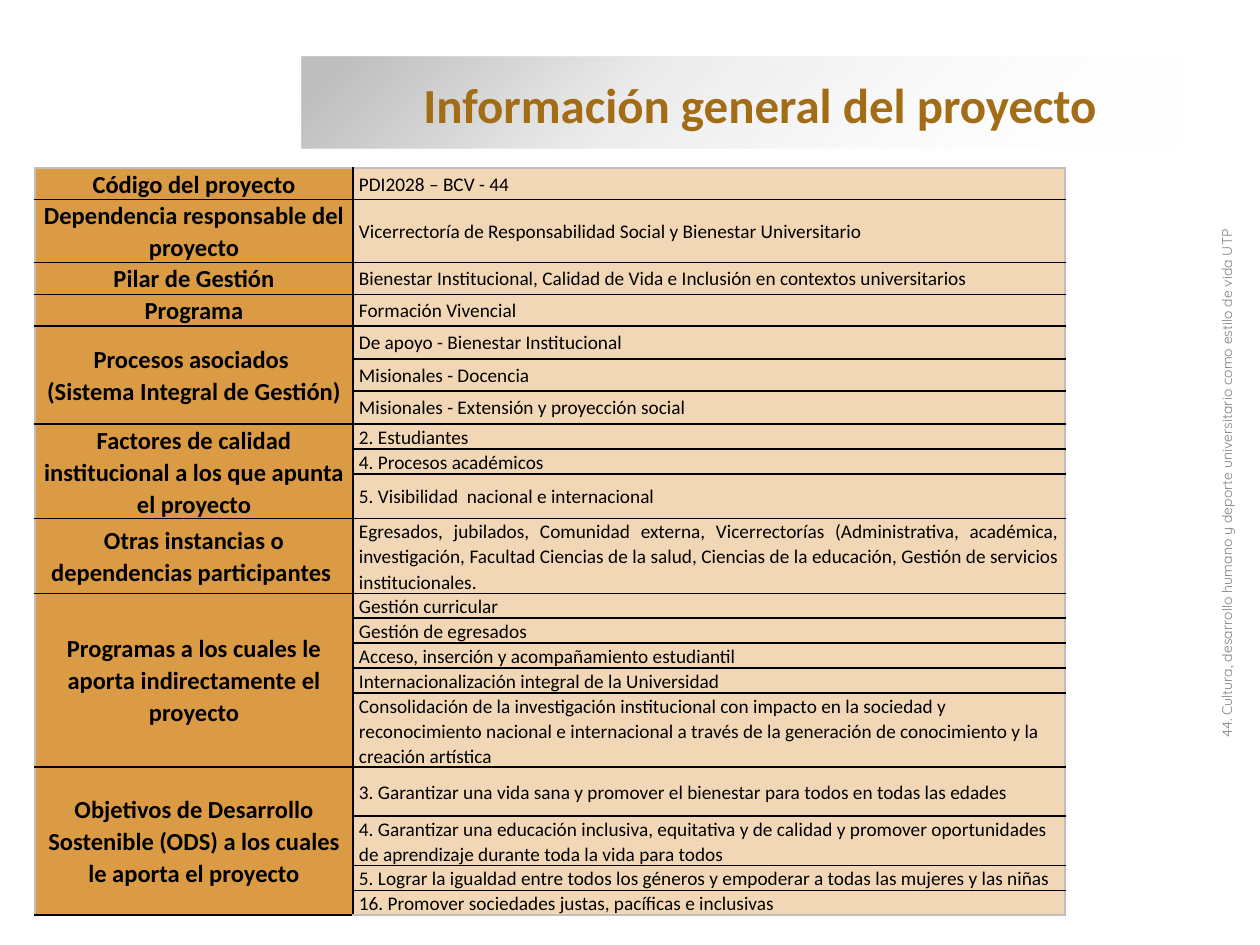
from lxml import etree
from pptx import Presentation
from pptx import util as u
from pptx.dml.color import RGBColor
from pptx.enum import shapes, text
from pptx.oxml import ns, parse_xml

EMU_PER_PX = 914400 / 126
BLACK = RGBColor(0x00, 0x00, 0x00)
WHITE = RGBColor(0xFF, 0xFF, 0xFF)
SILVER = RGBColor(0xBF, 0xBF, 0xBF)
GRAY = RGBColor(0x80, 0x80, 0x80)
BROWN = RGBColor(0xA2, 0x6D, 0x16)
OCHRE = RGBColor(0xDB, 0x9B, 0x45)
SAND = RGBColor(0xF1, 0xD7, 0xB5)

MIDDLE = text.MSO_ANCHOR.MIDDLE
LEFT, CENTER, JUSTIFY = text.PP_ALIGN.LEFT, text.PP_ALIGN.CENTER, text.PP_ALIGN.JUSTIFY
TITLE_FONT = {"name": "Calibri", "size": u.Pt(28), "bold": True}
SIDE_FONT = {"name": "Quicksand", "size": u.Pt(8)}
LABEL_FONT = {"name": "Calibri", "size": u.Pt(14), "bold": True}
VALUE_FONT = {"name": "Calibri", "size": u.Pt(11), "bold": False}

COLUMNS = [318, 712]
SECTIONS = [
    ("Código del proyecto", [(31, "PDI2028 – BCV - 44")]),
    ("Dependencia responsable del proyecto",
     [(63, "Vicerrectoría de Responsabilidad Social y Bienestar Universitario")]),
    ("Pilar de Gestión",
     [(32, "Bienestar Institucional, Calidad de Vida e Inclusión en contextos universitarios")]),
    ("Programa", [(31, "Formación Vivencial")]),
    ("Procesos asociados \n(Sistema Integral de Gestión)",
     [(33, "De apoyo - Bienestar Institucional"),
      (32, "Misionales - Docencia"),
      (33, "Misionales - Extensión y proyección social")]),
    ("Factores de calidad institucional a los que apunta el proyecto",
     [(25, "2. Estudiantes"),
      (25, "4. Procesos académicos"),
      (44, "5. Visibilidad  nacional e internacional")]),
    ("Otras instancias o dependencias participantes ",
     [(75, "Egresados, jubilados, Comunidad externa, Vicerrectorías (Administrativa, académica, "
           "investigación, Facultad Ciencias de la salud, Ciencias de la educación, "
           "Gestión de servicios institucionales.")]),
    ("Programas a los cuales le aporta indirectamente el proyecto",
     [(24, "Gestión curricular"),
      (25, "Gestión de egresados"),
      (25, "Acceso, inserción y acompañamiento estudiantil"),
      (25, "Internacionalización integral de la Universidad"),
      (74, "Consolidación de la investigación institucional con impacto en la sociedad y "
           "reconocimiento nacional e internacional a través de la generación de conocimiento "
           "y la creación artística")]),
    ("Objetivos de Desarrollo Sostenible (ODS) a los cuales le aporta el proyecto",
     [(49, "3. Garantizar una vida sana y promover el bienestar para todos en todas las edades"),
      (49, "4. Garantizar una educación inclusiva, equitativa y de calidad y promover "
           "oportunidades de aprendizaje durante toda la vida para todos"),
      (25, "5. Lograr la igualdad entre todos los géneros y empoderar a todas las mujeres y las niñas"),
      (24, "16. Promover sociedades justas, pacíficas e inclusivas")]),
]
JUSTIFIED = {"Programa", "Otras instancias o dependencias participantes "}


def px(*lengths):
    """Turn pixel lengths into a list of EMU."""
    return [u.Emu(round(n * EMU_PER_PX)) for n in lengths]


def set_all(target, values):
    """Set each attribute of target from a dict."""
    for name, value in values.items():
        setattr(target, name, value)


def write(p, content, font, color, **layout):
    """Fill a paragraph with formatted text."""
    p.text = content
    set_all(p, layout)
    for r in p.runs:
        set_all(r.font, font)
        r.font.color.rgb = color


def add_label(container, box, content, font, color, rotation=0, anchor=text.MSO_ANCHOR.TOP):
    """Add a wrapped text box."""
    sp = container.add_textbox(*px(*box))
    sp.rotation = rotation
    set_all(sp.text_frame, {"word_wrap": True, "vertical_anchor": anchor})
    write(sp.text_frame.paragraphs[0], content, font, color)


def add_gradient_band(container, box, stops, angle):
    """Add a borderless rectangle with a gradient of (position, colour, opacity) stops."""
    sp = container.add_shape(shapes.MSO_SHAPE.RECTANGLE, *px(*box))
    sp.shadow.inherit = False
    sp.line.fill.background()
    sp.fill.background()
    marks = "".join(
        f'<a:gs pos="{pos * 1000}"><a:srgbClr val="{color}">'
        f'<a:alpha val="{opacity * 1000}"/></a:srgbClr></a:gs>'
        for pos, color, opacity in stops)
    gradient = parse_xml(
        f'<a:gradFill {ns.nsdecls("a")} rotWithShape="1"><a:gsLst>{marks}</a:gsLst>'
        f'<a:lin ang="{angle * 60000}" scaled="0"/></a:gradFill>')
    props = sp._element.spPr
    props.replace(props.find(ns.qn("a:noFill")), gradient)


def set_borders(cell, colors):
    """Draw the left, right, top and bottom borders of a cell."""
    props = cell._tc.get_or_add_tcPr()
    for i, (side, color) in enumerate(zip("LRTB", colors)):
        line = etree.Element(ns.qn(f"a:ln{side}"), w=str(u.Pt(1)))
        fill = etree.SubElement(line, ns.qn("a:solidFill"))
        etree.SubElement(fill, ns.qn("a:srgbClr"), val=str(color))
        props.insert(i, line)


def style_cell(cell, color, margin):
    """Set the fill, anchor and insets of a cell."""
    side, = px(margin)
    set_all(cell, {"vertical_anchor": MIDDLE, "margin_left": side, "margin_right": side,
                   "margin_top": 0, "margin_bottom": 0})
    cell.fill.solid()
    cell.fill.fore_color.rgb = color


def add_project_table(s, left, top):
    """Add the table with one merged label per section."""
    heights = [height for _, rows in SECTIONS for height, _ in rows]
    count = len(heights)
    frame = s.shapes.add_table(count, 2, *px(left, top, sum(COLUMNS), sum(heights)))
    table = frame.table
    set_all(table, {"first_row": False, "horz_banding": False})
    for column, width in zip(table.columns, px(*COLUMNS)):
        column.width = width
    for row, height in zip(table.rows, px(*heights)):
        row.height = height
    for i in range(count):
        ends = [SILVER if i == 0 else BLACK, SILVER if i == count - 1 else BLACK]
        for j, (color, margin) in enumerate([(OCHRE, 5), (SAND, 6)]):
            cell = table.cell(i, j)
            style_cell(cell, color, margin)
            set_borders(cell, ([BLACK, SILVER] if j else [SILVER, BLACK]) + ends)
    first = 0
    for label, rows in SECTIONS:
        head = table.cell(first, 0)
        if len(rows) > 1:
            head.merge(table.cell(first + len(rows) - 1, 0))
        write(head.text_frame.paragraphs[0], label, LABEL_FONT, BLACK,
              alignment=CENTER, line_spacing=1.07)
        for i, (_, value) in enumerate(rows, first):
            write(table.cell(i, 1).text_frame.paragraphs[0], value, VALUE_FONT, BLACK,
                  alignment=JUSTIFY if label in JUSTIFIED else LEFT, line_spacing=1.07)
        first += len(rows)


def main():
    """Build and save the slide."""
    prs = Presentation()
    prs.slide_width, prs.slide_height = px(1260, 945)
    s = prs.slides.add_slide(prs.slide_layouts[6])
    heading = s.shapes.add_group_shape().shapes
    add_gradient_band(heading, (302, 57, 879, 91),
                      [(5, SILVER, 100), (37, SILVER, 31), (100, WHITE, 0)], 45)
    add_label(heading, (411, 68, 781, 72), "Información general del proyecto",
              TITLE_FONT, BROWN, anchor=MIDDLE)
    add_label(s.shapes, (922, 430, 610, 30),
              "44. Cultura, desarrollo humano y deporte universitario como estilo de vida UTP",
              SIDE_FONT, GRAY, rotation=270)
    add_project_table(s, 35, 168)
    prs.save("out.pptx")


if __name__ == "__main__":
    main()
